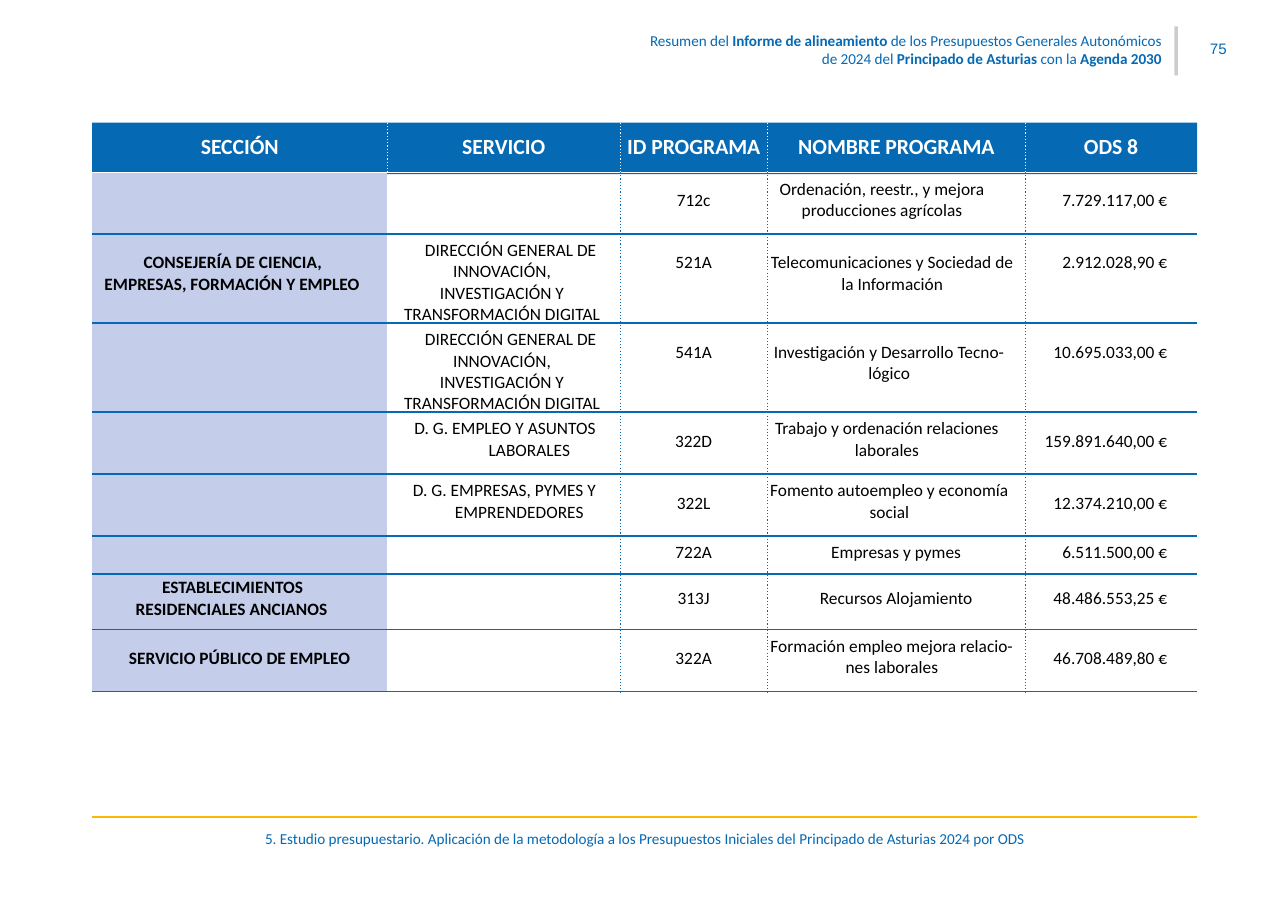
import dataclasses

import lxml.etree
import pptx
import pptx.dml.color
import pptx.enum.shapes
import pptx.enum.text
import pptx.oxml.ns
import pptx.util

Cm = pptx.util.Cm
Pt = pptx.util.Pt
qn = pptx.oxml.ns.qn
Align = pptx.enum.text.PP_ALIGN

BLUE = pptx.dml.color.RGBColor(0x06, 0x69, 0xB3)
LAVENDER = pptx.dml.color.RGBColor(0xC4, 0xCE, 0xEB)
YELLOW = pptx.dml.color.RGBColor(0xFB, 0xB8, 0x00)
BLACK = pptx.dml.color.RGBColor(0x00, 0x00, 0x00)
WHITE = pptx.dml.color.RGBColor(0xFF, 0xFF, 0xFF)

MARGIN = 1.5
CONTENT_WIDTH = 18
TABLE_TOP = 2
COLUMN_WIDTHS = [4.81, 3.79, 2.4, 4.2, 2.8]
HEADER_HEIGHT = 0.81
HEADINGS = ["SECCIÓN", "SERVICIO", "ID PROGRAMA", "NOMBRE PROGRAMA", "ODS 8"]
DIGITAL = "DIRECCIÓN GENERAL DE INNOVACIÓN, INVESTIGACIÓN Y TRANSFORMACIÓN DIGITAL"
DIGITAL_FORMAT = dict(top=0.1, left=0.23, first=0.28, right=0.28)


@dataclasses.dataclass
class Program:
    height: float
    code: str
    name: str
    amount: str
    top: float = 0.3
    name_top: float = 0.1
    name_right: float = 0
    section: str = ""
    section_format: dict = dataclasses.field(default_factory=dict)
    service: str = ""
    service_format: dict = dataclasses.field(default_factory=dict)


PROGRAMS = [
    Program(1, "712c", "Ordenación, reestr., y mejora producciones agrícolas",
            "7.729.117,00 €", top=0.28, name_right=0.46),
    Program(1.4, "521A", "Telecomunicaciones y Sociedad de la Información",
            "2.912.028,90 €", name_top=0.3, name_right=0.13,
            section="CONSEJERÍA DE CIENCIA, EMPRESAS, FORMACIÓN Y EMPLEO",
            section_format=dict(top=0.3, left=0.2, first=0.64, right=0.3, align=Align.LEFT),
            service=DIGITAL, service_format=DIGITAL_FORMAT),
    Program(1.4, "541A", "Investigación y Desarrollo Tecno- lógico",
            "10.695.033,00 €", name_top=0.3, name_right=0.23,
            service=DIGITAL, service_format=DIGITAL_FORMAT),
    Program(1.01, "322D", "Trabajo y ordenación relaciones laborales",
            "159.891.640,00 €", name_right=0.3, service="D. G. EMPLEO Y ASUNTOS LABORALES",
            service_format=dict(top=0.1, left=1.22, first=-0.79, right=0.38)),
    Program(1.01, "322L", "Fomento autoempleo y economía social",
            "12.374.210,00 €", name_right=0.22,
            service="D. G. EMPRESAS, PYMES Y EMPRENDEDORES",
            service_format=dict(top=0.1, left=0.86, first=-0.48, right=0.35)),
    Program(0.62, "722A", "Empresas y pymes", "6.511.500,00 €", top=0.1),
    Program(0.9, "313J", "Recursos Alojamiento", "48.486.553,25 €", top=0.23, name_top=0.23,
            section="ESTABLECIMIENTOS RESIDENCIALES ANCIANOS",
            section_format=dict(top=0.05, left=0.71, first=0.43, align=Align.LEFT)),
    Program(1.01, "322A", "Formación empleo mejora relacio- nes laborales",
            "46.708.489,80 €", name_right=0.14, section="SERVICIO PÚBLICO DE EMPLEO",
            section_format=dict(top=0.3)),
]


def write_text(frame, text, size=8, color=BLACK, font="Calibri", align=Align.CENTER,
               bold=False, left=0, first=0):
    paragraph = frame.paragraphs[0]
    paragraph.alignment = align
    properties = paragraph._p.get_or_add_pPr()
    properties.set("marL", str(int(Cm(left))))
    properties.set("indent", str(int(Cm(first))))
    if not text:
        lxml.etree.SubElement(paragraph._p, qn("a:endParaRPr"), sz=str(size * 100))
    for index, part in enumerate(text.split("**")):
        if part:
            run = paragraph.add_run()
            run.text = part
            run.font.name = font
            run.font.size = Pt(size)
            run.font.color.rgb = color
            run.font.bold = bold or index % 2 == 1


class ReportPage:
    """Builds one page of the budget report on a blank slide."""

    def __init__(self, presentation):
        self.slide = presentation.slides.add_slide(presentation.slide_layouts[6])
        self.shapes = self.slide.shapes

    def text(self, text, left, top, width, height, **text_format):
        frame = self.shapes.add_textbox(Cm(left), Cm(top), Cm(width), Cm(height)).text_frame
        frame.word_wrap = True
        frame.margin_left = frame.margin_right = frame.margin_bottom = 0
        frame.margin_top = Cm(0.03)
        write_text(frame, text, size=7, color=BLUE, **text_format)

    def bar(self, left, top, width, height, color, opacity=100):
        shape = self.shapes.add_shape(pptx.enum.shapes.MSO_SHAPE.RECTANGLE,
                                      Cm(left), Cm(top), Cm(width), Cm(height))
        shape.shadow.inherit = False
        shape.fill.solid()
        shape.fill.fore_color.rgb = color
        shape.line.fill.background()
        if opacity < 100:
            tint = shape._element.spPr.find(qn("a:solidFill"))[0]
            lxml.etree.SubElement(tint, qn("a:alpha"), val=str(opacity * 1000))

    def rule(self, left, top, width, color):
        connector = self.shapes.add_connector(pptx.enum.shapes.MSO_CONNECTOR.STRAIGHT,
                                              Cm(left), Cm(top), Cm(left + width), Cm(top))
        connector.line.color.rgb = color
        connector.line.width = Pt(1)
        lxml.etree.SubElement(connector._element.spPr, qn("a:effectLst"))

    def border(self, cell, side, color=None, width=0.5, dash="solid"):
        line = lxml.etree.SubElement(cell._tc.get_or_add_tcPr(), qn("a:ln" + side),
                                     w=str(int(Pt(width))))
        if color is None:
            lxml.etree.SubElement(line, qn("a:noFill"))
        else:
            fill = lxml.etree.SubElement(line, qn("a:solidFill"))
            lxml.etree.SubElement(fill, qn("a:srgbClr"), val=str(color))
            lxml.etree.SubElement(line, qn("a:prstDash"), val=dash)

    def cell(self, cell, text, row, column, top=0, right=0, **text_format):
        cell.margin_left = cell.margin_bottom = 0
        cell.margin_top = Cm(top)
        cell.margin_right = Cm(right)
        write_text(cell.text_frame, text, **text_format)
        first_divider = 0 if row == 0 else 1
        divider = WHITE if row == 0 else BLUE
        self.border(cell, "L", divider if column > first_divider else None, dash="sysDot")
        self.border(cell, "R", divider if first_divider <= column < 4 else None, dash="sysDot")
        if row == 0:
            self.border(cell, "T")
            self.border(cell, "B", WHITE)
        else:
            self.border(cell, "T", WHITE if row == 1 else BLUE, 0.5 if row == 1 else 1)
            self.border(cell, "B", BLUE, 1)
        if row == 0 or column == 0:
            cell.fill.solid()
            cell.fill.fore_color.rgb = BLUE if row == 0 else LAVENDER
        else:
            cell.fill.background()

    def table(self, programs):
        heights = [HEADER_HEIGHT] + [program.height for program in programs]
        table = self.shapes.add_table(len(heights), len(COLUMN_WIDTHS), Cm(MARGIN), Cm(TABLE_TOP),
                                      Cm(CONTENT_WIDTH), Cm(sum(heights))).table
        table.first_row = table.horz_banding = False
        for column, width in zip(table.columns, COLUMN_WIDTHS):
            column.width = Cm(width)
        for row, height in zip(table.rows, heights):
            row.height = Cm(height)
        for column, heading in enumerate(HEADINGS):
            self.cell(table.cell(0, column), heading, 0, column, top=0.18,
                      size=10, color=WHITE, bold=True)
        for row, program in enumerate(programs, 1):
            contents = [
                (program.section, dict(program.section_format, bold=True)),
                (program.service, program.service_format),
                (program.code, dict(top=program.top)),
                (program.name, dict(top=program.name_top, right=program.name_right)),
                (program.amount, dict(top=program.top, right=0.48, align=Align.RIGHT)),
            ]
            for column, (text, text_format) in enumerate(contents):
                self.cell(table.cell(row, column), text, row, column, **text_format)


def main():
    presentation = pptx.Presentation()
    presentation.slide_width = Cm(20.98)
    presentation.slide_height = Cm(14.81)
    page = ReportPage(presentation)
    page.rule(MARGIN, 13.31, CONTENT_WIDTH, YELLOW)
    page.text("Resumen del **Informe de alineamiento** de los Presupuestos Generales Autonómicos "
              "de 2024 del **Principado de Asturias** con la **Agenda 2030**",
              10.39, 0.48, 8.53, 0.64, align=Align.RIGHT)
    page.bar(19.13, 0.43, 0.06, 0.8, BLACK, opacity=20)
    page.text("75", 19.71, 0.61, 0.4, 0.36, font="Arial", align=Align.LEFT)
    page.bar(MARGIN, TABLE_TOP, CONTENT_WIDTH, 0.84, BLUE)
    page.table(PROGRAMS)
    page.text("5. Estudio presupuestario. Aplicación de la metodología a los Presupuestos "
              "Iniciales del Principado de Asturias 2024 por ODS",
              MARGIN, 13.49, CONTENT_WIDTH, 0.3)
    presentation.save("out.pptx")


if __name__ == "__main__":
    main()
